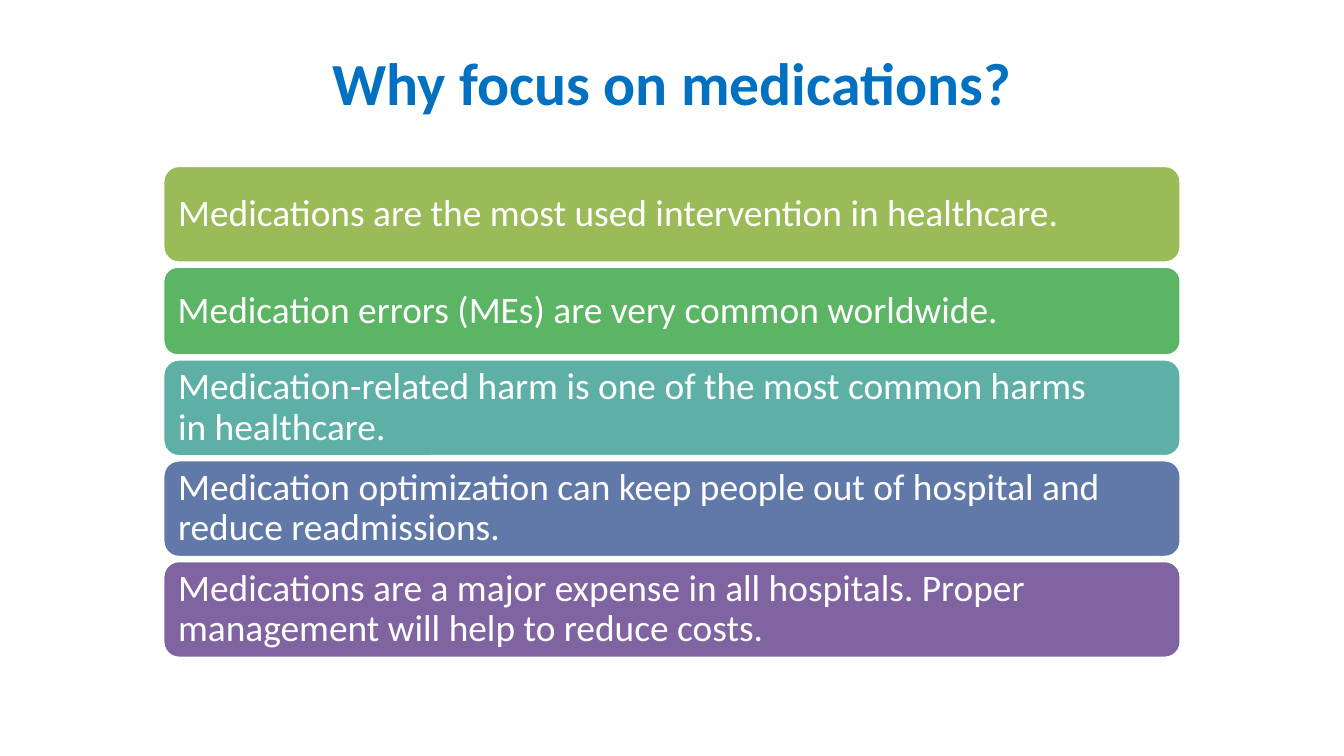
from dataclasses import dataclass

from pptx import Presentation
from pptx.dml.color import RGBColor
from pptx.enum.shapes import MSO_SHAPE as Shape
from pptx.enum.text import MSO_ANCHOR as Anchor, PP_ALIGN as Align
from pptx.util import Inches, Pt


@dataclass(frozen=True)
class Theme:
    font: str = "Calibri"
    title_size: int = 32
    body_size: int = 20
    title: str = "0070C0"
    light: str = "FFFFFF"


THEME = Theme()
BAR_LEFT, BAR_TOP, BAR_WIDTH, BAR_GAP = 1.21, 1.23, 7.58, 0.02

# Text, fill colour and height of each bar; \v is a line break.
REASONS = [
    ("Medications are the most used intervention in healthcare.", "9BBB59", 0.73),
    ("Medication errors (MEs) are very common worldwide.", "5CB565", 0.67),
    ("Medication-related harm is one of the most common harms\vin healthcare.",
     "5EAFA6", 0.73),
    ("Medication optimization can keep people out of hospital and "
     "reduce readmissions.", "6179A8", 0.73),
    ("Medications are a major expense in all hospitals. Proper "
     "management will help to reduce costs.", "8064A2", 0.73),
]


def write_text(shape, text, size, color, align, bold=False):
    frame = shape.text_frame
    frame.word_wrap = True
    frame.vertical_anchor = Anchor.MIDDLE
    para = frame.paragraphs[0]
    para.text = text
    para.alignment = align
    for span in para.runs:
        span.font.name = THEME.font
        span.font.size = Pt(size)
        span.font.bold = bold
        span.font.color.rgb = RGBColor.from_string(color)
    return para


def set_title(page, text):
    title = page.shapes.title
    title.left, title.top = Inches(0.5), Inches(0.31)
    title.width, title.height = Inches(9), Inches(0.59)
    write_text(title, text, THEME.title_size, THEME.title, Align.CENTER, bold=True)


def add_bar(page, text, fill, top, height):
    bar = page.shapes.add_shape(Shape.ROUNDED_RECTANGLE, Inches(BAR_LEFT),
                                Inches(top), Inches(BAR_WIDTH), Inches(height))
    bar.shadow.inherit = False
    bar.fill.solid()
    bar.fill.fore_color.rgb = RGBColor.from_string(fill)
    bar.line.color.rgb = RGBColor.from_string(THEME.light)
    bar.line.width = Pt(2)
    frame = bar.text_frame
    frame.margin_left = frame.margin_right = Inches(0.08)
    frame.margin_top = frame.margin_bottom = Inches(0.08)
    para = write_text(bar, text, THEME.body_size, THEME.light, Align.LEFT)
    para.line_spacing = 0.9


def main():
    deck = Presentation()
    deck.slide_width = Inches(10)
    deck.slide_height = Inches(10) * 9 // 16
    page = deck.slides.add_slide(deck.slide_layouts[5])
    set_title(page, "Why focus on medications?")
    top = BAR_TOP
    for text, fill, height in REASONS:
        add_bar(page, text, fill, top, height)
        top += height + BAR_GAP
    deck.save("out.pptx")


if __name__ == "__main__":
    main()
